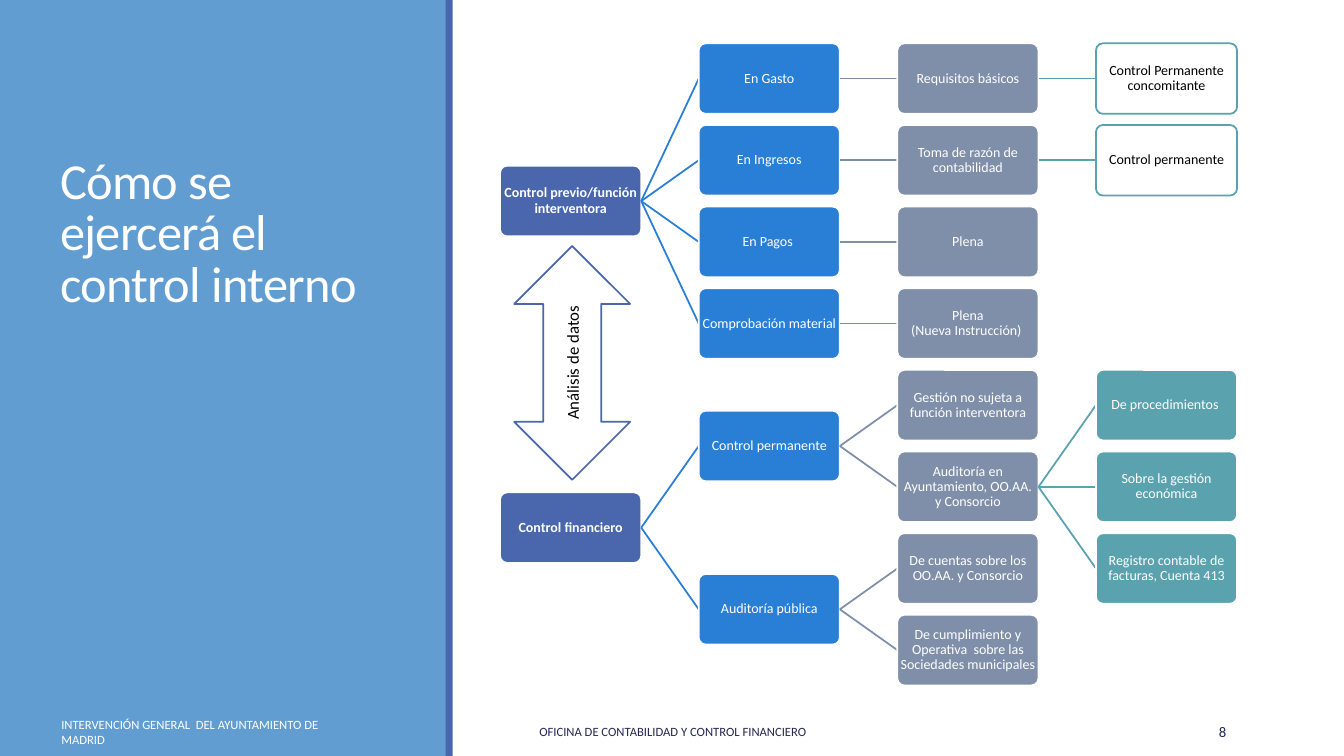
from lxml.etree import SubElement
from pptx import Presentation
from pptx.dml.color import RGBColor
from pptx.enum.shapes import MSO_CONNECTOR, MSO_SHAPE
from pptx.enum.text import MSO_ANCHOR, PP_ALIGN
from pptx.oxml.ns import qn
from pptx.util import Inches, Pt

WHITE = RGBColor(0xFF, 0xFF, 0xFF)
BLACK = RGBColor(0x00, 0x00, 0x00)
SKY = RGBColor(0x62, 0x9D, 0xD1)
INDIGO = RGBColor(0x4A, 0x66, 0xAC)
BLUE = RGBColor(0x29, 0x7F, 0xD5)
GRAY = RGBColor(0x7F, 0x8F, 0xA9)
TEAL = RGBColor(0x5A, 0xA2, 0xAE)
NAVY = RGBColor(0x24, 0x28, 0x52)

LEVELS = [INDIGO, BLUE, GRAY, TEAL]
LEFT, TOP = 4.96, 0.43
STEP, PITCH = 1.97, 0.81
WIDTH, HEIGHT = 1.4, 0.7

TREE = [
    ("Control previo/función interventora", 1.5, [
        ("En Gasto", 0, [
            ("Requisitos básicos", 0, [
                ("Control Permanente concomitante", 0, [])])]),
        ("En Ingresos", 1, [
            ("Toma de razón de contabilidad", 1, [
                ("Control permanente", 1, [])])]),
        ("En Pagos ", 2, [("Plena", 2, [])]),
        ("Comprobación material", 3, [
            ("Plena\n(Nueva Instrucción) ", 3, [])]),
    ]),
    ("Control financiero", 5.5, [
        ("Control permanente", 4.5, [
            ("Gestión no sujeta a función interventora", 4, []),
            ("Auditoría en Ayuntamiento, OO.AA. y Consorcio", 5, [
                ("De procedimientos ", 4, []),
                ("Sobre la gestión económica", 5, []),
                ("Registro contable de facturas, Cuenta 413", 6, [])]),
        ]),
        ("Auditoría pública", 6.5, [
            ("De cuentas sobre los OO.AA. y Consorcio", 6, []),
            ("De cumplimiento y Operativa  sobre las Sociedades municipales",
             7, []),
        ]),
    ]),
]
OUTLINED = ("Control Permanente concomitante", "Control permanente")


class Board:
    face = "Calibri"
    weight = Pt(1.25)

    def __init__(self, slide):
        self.slide = slide

    def apply(self, target, values):
        for name, value in values.items():
            setattr(target, name, value)

    def fill_text(self, shape, text, size, color, bold=False, para=None, frame=None):
        body = shape.text_frame
        self.apply(body, {"word_wrap": True, "vertical_anchor": MSO_ANCHOR.MIDDLE,
                          **(frame or {})})
        line = body.paragraphs[0]
        line.text = text
        self.apply(line, {"alignment": PP_ALIGN.LEFT, **(para or {})})
        for run in line.runs:
            self.apply(run.font, {"name": self.face, "size": Pt(size), "bold": bold})
            run.font.color.rgb = color
        for gap in line._p.findall(qn("a:br")):
            SubElement(gap, qn("a:rPr")).set("sz", str(size * 100))
        return line

    def shape(self, kind, place, fill, edge=None):
        item = self.slide.shapes.add_shape(kind, *map(Inches, place))
        item.shadow.inherit = False
        item.fill.solid()
        item.fill.fore_color.rgb = fill
        if edge is None:
            item.line.fill.background()
        else:
            item.line.color.rgb = edge
            item.line.width = self.weight
        return item

    def label(self, place, text, size, color, **style):
        item = self.slide.shapes.add_textbox(*map(Inches, place))
        return self.fill_text(item, text, size, color, **style)

    def link(self, start, end, color):
        item = self.slide.shapes.add_connector(
            MSO_CONNECTOR.STRAIGHT, *map(Inches, start + end))
        item.line.color.rgb = color
        item.line.width = self.weight
        SubElement(item._element.spPr, qn("a:effectLst"))

    def node(self, entry, depth=0, start=None):
        text, row, kids = entry
        left, top = LEFT + STEP * depth, TOP + PITCH * row
        middle = top + HEIGHT / 2
        color = LEVELS[depth]
        hollow = depth == 3 and text in OUTLINED
        if start:
            self.link(start, (left, middle), color)
        box = self.shape(MSO_SHAPE.ROUNDED_RECTANGLE, (left, top, WIDTH, HEIGHT),
                         WHITE if hollow else color, color if hollow else WHITE)
        box.adjustments[0] = 0.1
        sides = ("left", "right", "top", "bottom")
        self.fill_text(box, text, 10, BLACK if hollow else WHITE, bold=depth == 0,
                       para={"alignment": PP_ALIGN.CENTER, "line_spacing": 0.9},
                       frame={f"margin_{side}": Inches(0.01) for side in sides})
        for kid in kids:
            self.node(kid, depth + 1, (left + WIDTH, middle))

    def arrow(self, place, text):
        item = self.shape(MSO_SHAPE.UP_DOWN_ARROW, place, WHITE, INDIGO)
        self.fill_text(item, text, 12, BLACK, para={"alignment": PP_ALIGN.CENTER})
        item.text_frame._txBody.bodyPr.set("vert", "vert270")


def main():
    deck = Presentation()
    deck.slide_width, deck.slide_height = Inches(13.33), Inches(7.5)
    board = Board(deck.slides.add_slide(deck.slide_layouts[6]))

    board.shape(MSO_SHAPE.RECTANGLE, (0, 0, 4.43, 7.5), SKY)
    board.shape(MSO_SHAPE.RECTANGLE, (4.42, 0, 0.07, 7.5), INDIGO)
    title = board.label((0.5, 0.65, 3.5, 2.5), "Cómo se ejercerá el control interno",
                        36, WHITE, para={"line_spacing": 0.85},
                        frame={"vertical_anchor": MSO_ANCHOR.BOTTOM})
    title.runs[0]._r.get_or_add_rPr().set("spc", "-50")

    for branch in TREE:
        board.node(branch)

    board.label((0.51, 7.06, 2.86, 0.4),
                "INTERVENCIÓN GENERAL  DEL AYUNTAMIENTO DE MADRID", 9, WHITE)
    board.label((5.25, 7.06, 5.08, 0.4),
                "OFICINA DE CONTABILIDAD Y CONTROL FINANCIERO", 9, NAVY)
    board.label((10.83, 7.06, 1.43, 0.4), "8", 10.5, NAVY,
                para={"alignment": PP_ALIGN.RIGHT})
    board.arrow((5.1, 2.44, 1.15, 2.32), "Análisis de datos")
    deck.save("out.pptx")


if __name__ == "__main__":
    main()
